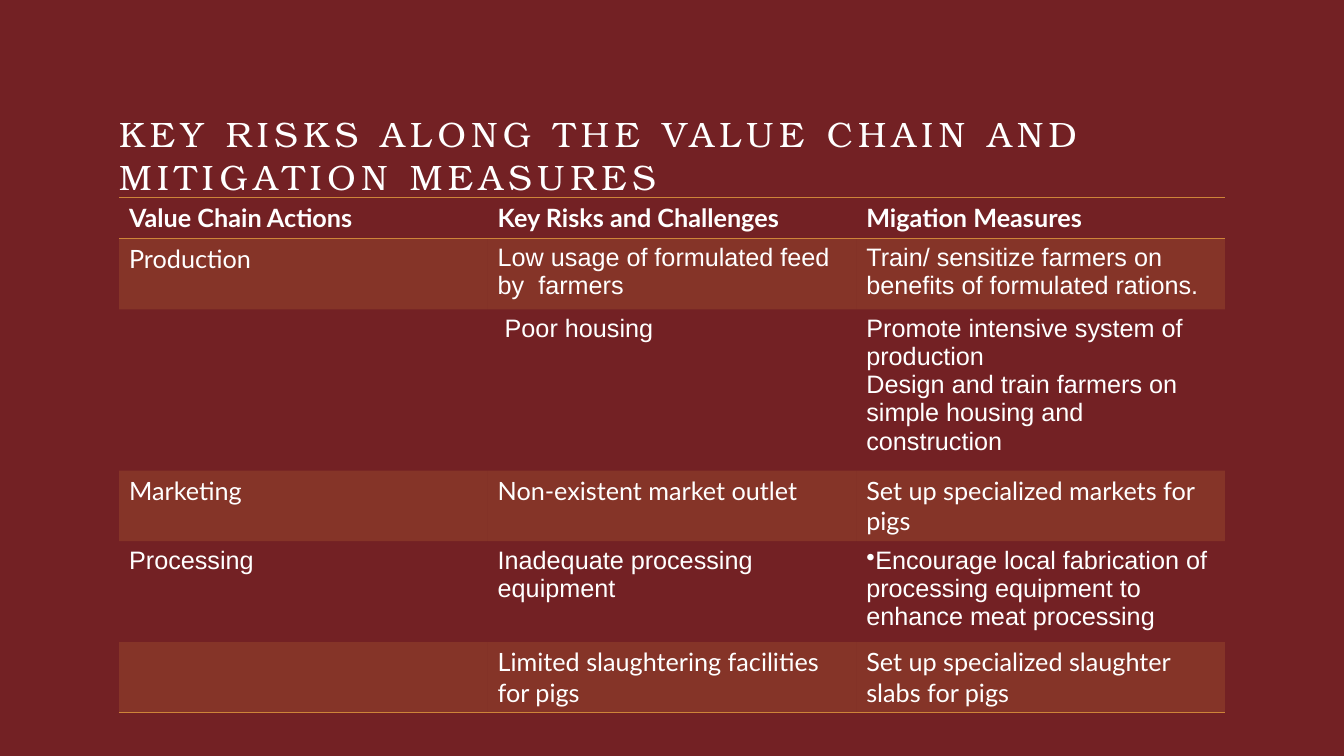
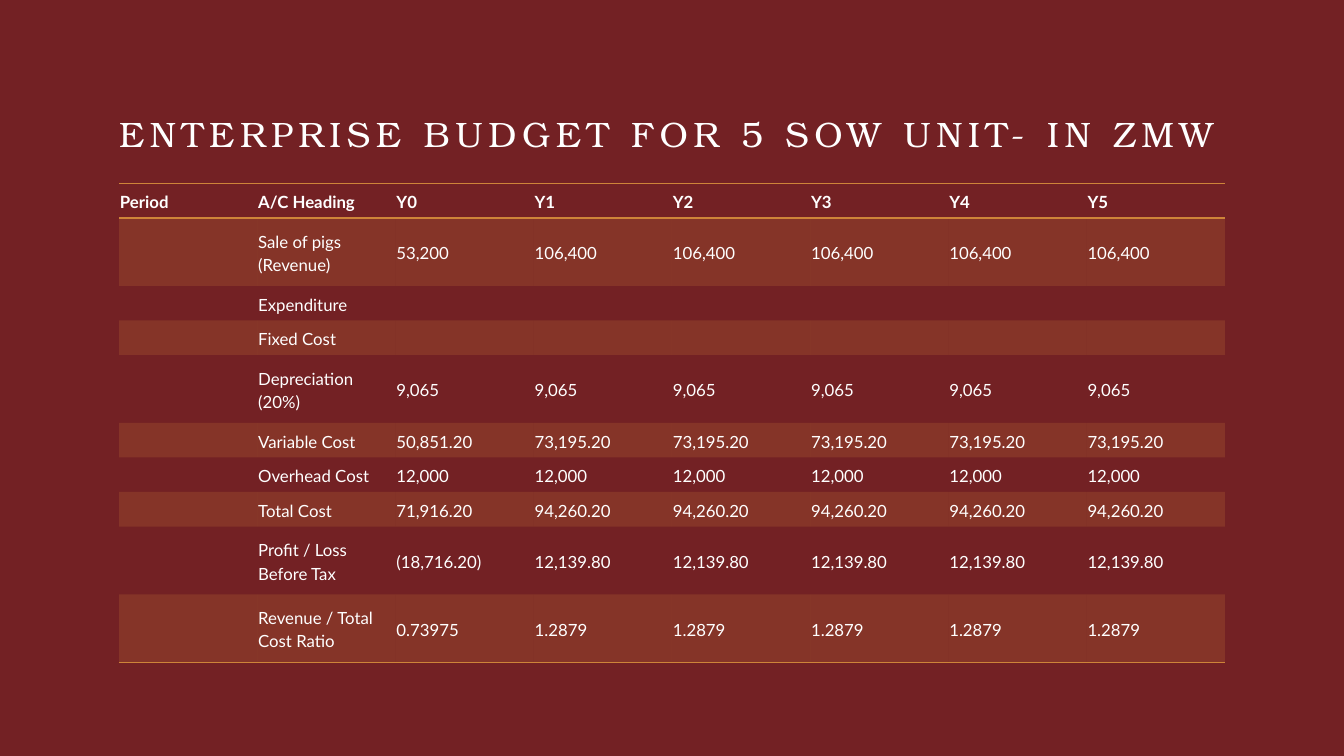
import pptx
import pptx.dml.color
import pptx.enum.text
import pptx.oxml
import pptx.oxml.ns
import pptx.util

Pt = pptx.util.Pt
COLOURS = {"background": "732124", "accent": "CE8439", "text": "FFFFFF"}
RGB = {name: pptx.dml.color.RGBColor.from_string(value) for name, value in COLOURS.items()}
TITLE_FONT, BODY_FONT, PLAIN_FONT = "TeX Gyre Bonum", "Lato", "Arial"
NAMESPACE = pptx.oxml.ns.nsdecls("a")
NO_STYLE = "{2D5ABB26-0587-4C30-8999-92F81FD0307C}"
LEFT, WIDTH = 85, 790


def add_page(deck, title):
    page = deck.slides.add_slide(deck.slide_layouts[6])
    page.background.fill.solid()
    page.background.fill.fore_color.rgb = RGB["background"]
    box = page.shapes.add_textbox(Pt(LEFT), Pt(80), Pt(WIDTH), Pt(52))
    frame = box.text_frame
    frame.word_wrap = True
    frame.margin_left = frame.margin_right = frame.margin_top = frame.margin_bottom = 0
    para = frame.paragraphs[0]
    para.text = title
    para.line_spacing = Pt(30.7)
    para.font.name = TITLE_FONT
    para.font.size = Pt(25.2)
    para.font.color.rgb = RGB["text"]
    para.runs[0]._r.get_or_add_rPr().set("spc", "400")
    return page


def add_grid(page, top, heights, rows, size, fonts, compact):
    columns = len(rows[0])
    frame = page.shapes.add_table(len(rows), columns, Pt(LEFT), Pt(top), Pt(WIDTH), Pt(sum(heights)))
    grid = frame.table
    grid._tbl.tblPr.find(pptx.oxml.ns.qn("a:tableStyleId")).text = NO_STYLE
    for column in grid.columns:
        column.width = Pt(WIDTH / columns)
    for row_index, texts in enumerate(rows):
        grid.rows[row_index].height = Pt(heights[row_index])
        for column_index, text in enumerate(texts):
            cell = grid.cell(row_index, column_index)
            if compact:
                cell.margin_left = cell.margin_right = cell.margin_top = cell.margin_bottom = Pt(0.7)
                cell.vertical_anchor = pptx.enum.text.MSO_ANCHOR.MIDDLE
            cell.text_frame.text = text.removeprefix("•")
            for para in cell.text_frame.paragraphs:
                if text.startswith("•"):
                    bullet = pptx.oxml.parse_xml(f'<a:buChar {NAMESPACE} char="•"/>')
                    para._p.get_or_add_pPr().append(bullet)
                if compact:
                    para.line_spacing = 1.15
                    para.space_after = Pt(8)
                para.font.name = fonts.get((row_index, column_index), BODY_FONT)
                para.font.size = Pt(size)
                para.font.bold = row_index == 0
                para.font.color.rgb = RGB["text"]
                if not text:
                    para._p.get_or_add_endParaRPr().set("sz", str(size * 100))
            if row_index % 2:
                cell.fill.solid()
                cell.fill.fore_color.rgb = RGB["accent"]
                tint = cell._tc.tcPr.find(".//" + pptx.oxml.ns.qn("a:srgbClr"))
                tint.append(pptx.oxml.parse_xml(f'<a:alpha {NAMESPACE} val="20000"/>'))
            else:
                cell.fill.background()
            edges = {0: ["lnT", "lnB"], len(rows) - 1: ["lnB"]}.get(row_index, [])
            for position, edge in enumerate(edges):
                line = pptx.oxml.parse_xml(
                    f'<a:{edge} {NAMESPACE} w="12700"><a:solidFill>'
                    f'<a:srgbClr val="{COLOURS["accent"]}"/></a:solidFill></a:{edge}>')
                cell._tc.tcPr.insert(position, line)


deck = pptx.Presentation()
deck.slide_width, deck.slide_height = Pt(960), Pt(540)

risks = [
    ["Value Chain Actions", "Key Risks and Challenges", "Migation Measures"],
    ["Production", "Low usage of formulated feed by  farmers",
     "Train/ sensitize farmers on benefits of formulated rations."],
    ["", " Poor housing",
     "Promote intensive system of production\n"
     "Design and train farmers on simple housing and construction"],
    ["Marketing", "Non-existent market outlet", "Set up specialized markets for pigs"],
    ["Processing", "Inadequate processing equipment",
     "•Encourage local fabrication of processing equipment to enhance meat processing"],
    ["", "Limited slaughtering facilities for pigs", "Set up specialized slaughter slabs for pigs"],
]
plain_cells = [(1, 1), (1, 2), (2, 1), (2, 2), (4, 0), (4, 1), (4, 2)]
page = add_page(deck, "KEY RISKS ALONG THE VALUE CHAIN AND MITIGATION MEASURES")
add_grid(page, 141, [29.5] * len(risks), risks, 18, dict.fromkeys(plain_cells, PLAIN_FONT), False)

accounts = [
    ("Sale of pigs (Revenue)", "53,200", "106,400"),
    ("Expenditure", "", ""),
    ("Fixed Cost", "", ""),
    ("Depreciation (20%)", "9,065", "9,065"),
    ("Variable Cost", "50,851.20", "73,195.20"),
    ("Overhead Cost", "12,000", "12,000"),
    ("Total Cost", "71,916.20", "94,260.20"),
    ("Profit / Loss Before Tax", "(18,716.20)", "12,139.80"),
    ("Revenue / Total Cost Ratio", "0.73975", "1.2879"),
]
budget = [["Period", "A/C Heading"] + [f"Y{year}" for year in range(6)]]
for heading, first_year, later_years in accounts:
    budget.append(["", heading, first_year] + [later_years] * 5)
tall_rows = {1, 4, 8, 9}
heights = [48.5 if index in tall_rows else 24.7 for index in range(len(budget))]
page = add_page(deck, "ENTERPRISE BUDGET FOR 5 SOW UNIT- IN ZMW")
add_grid(page, 131, heights, budget, 12, {}, True)

deck.save("out.pptx")
